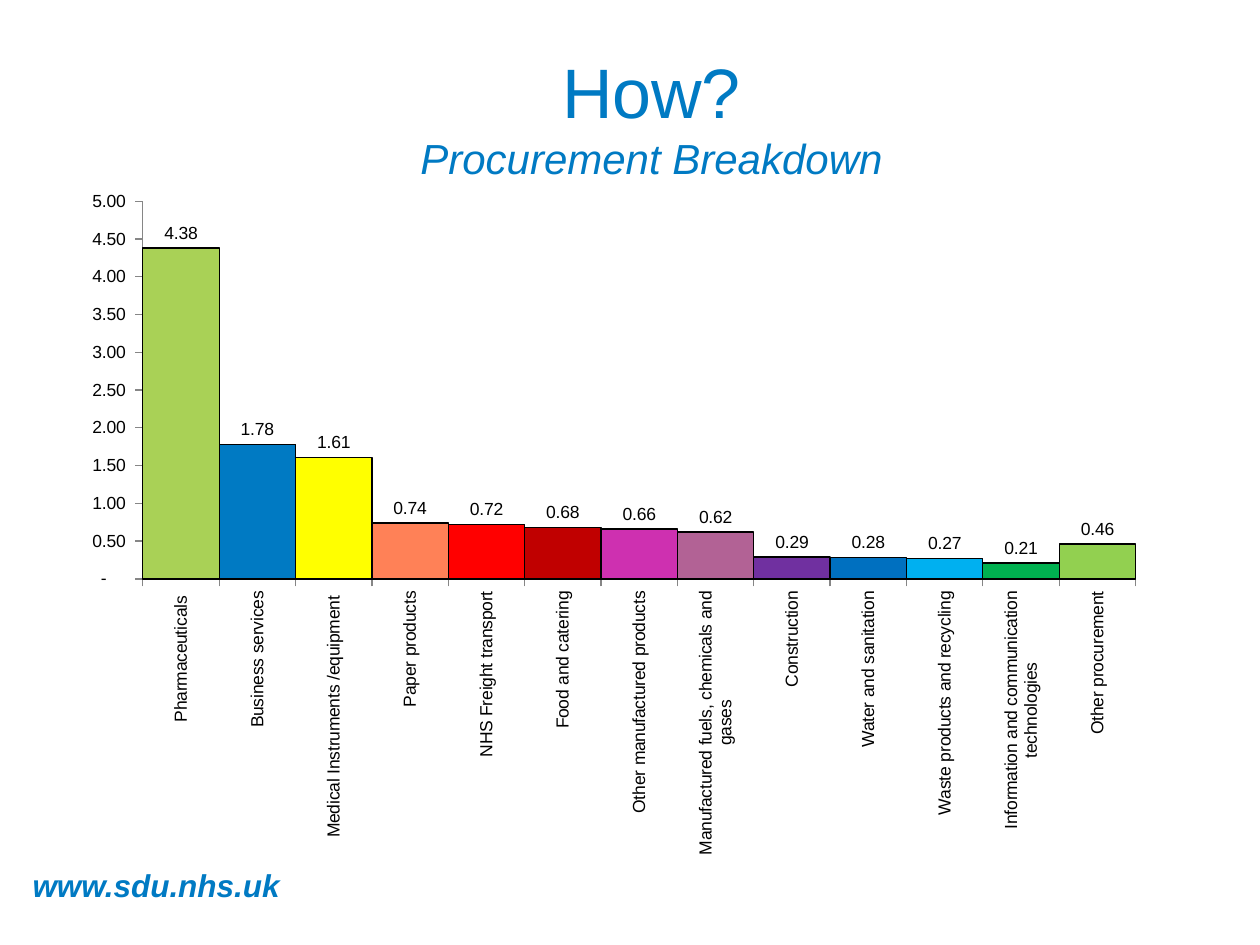
from lxml import etree
from pptx import Presentation
from pptx.chart.data import CategoryChartData
from pptx.dml.color import RGBColor
from pptx.enum.chart import XL_CHART_TYPE, XL_LABEL_POSITION, XL_TICK_MARK
from pptx.enum.text import MSO_ANCHOR, MSO_AUTO_SIZE, PP_ALIGN
from pptx.oxml import parse_xml
from pptx.oxml.ns import nsdecls, qn
from pptx.util import Inches, Pt

THEME = {
    "font": "Arial",
    "accent": "007AC3", "text": "000000", "axis": "868686",
    "title": 40, "subtitle": 24, "address": 18, "chart": 10,
}
TITLE = "How?"
SUBTITLE = "Procurement Breakdown"
ADDRESS = "www.sdu.nhs.uk"
PROCUREMENT = [  # category (long ones on two lines), value, bar colour
    ("Pharmaceuticals ", 4.38, "A9D156"),
    ("Business services", 1.78, "007AC3"),
    ("Medical Instruments /equipment ", 1.61, "FFFF00"),
    ("Paper products", 0.74, "FF8157"),
    ("NHS Freight transport", 0.72, "FF0000"),
    ("Food and catering", 0.68, "C00000"),
    ("Other manufactured products", 0.66, "CE30B0"),
    ("Manufactured fuels, chemicals and\ngases", 0.62, "B26295"),
    ("Construction", 0.29, "7030A0"),
    ("Water and sanitation", 0.28, "0070C0"),
    ("Waste products and recycling", 0.27, "00B0F0"),
    ("Information and communication\ntechnologies", 0.21, "00B050"),
    ("Other procurement", 0.46, "92D050"),
]
TITLE_BOX = (1.17, 0.55, 8, 0.74)
CHART_BOX = (0.51, 1.4, 8.66, 5.5)
PLOT_BOX = (1.13, 1.6, 7.88, 3)
ADDRESS_BOX = (0.12, 6.82, 2.24, 0.31)
AXIS_FORMAT = '_-* #,##0.00_-;\\-* #,##0.00_-;_-* "-"??_-;_-@_-'


def inches(box):
    return [Inches(length) for length in box]


def color(name):
    return RGBColor.from_string(THEME.get(name, name))


def style_font(font, size, color_name, bold=False, italic=False):
    font.name = THEME["font"]
    font.size = Pt(THEME[size])
    font.color.rgb = color(color_name)
    font.bold, font.italic = bold, italic


def add_title(slide):
    title = slide.shapes.title
    title.left, title.top, title.width, title.height = inches(TITLE_BOX)
    frame = title.text_frame
    frame.text = f"{TITLE}\v{SUBTITLE}"
    frame.auto_size = MSO_AUTO_SIZE.NONE
    frame.vertical_anchor = MSO_ANCHOR.MIDDLE
    paragraph = frame.paragraphs[0]
    paragraph.alignment = PP_ALIGN.CENTER
    heading, subtitle = paragraph.runs
    style_font(heading.font, "title", "accent")
    style_font(subtitle.font, "subtitle", "accent", italic=True)


def add_address(slide):
    frame = slide.shapes.add_textbox(*inches(ADDRESS_BOX)).text_frame
    frame.word_wrap = True
    frame.text = ADDRESS
    paragraph = frame.paragraphs[0]
    paragraph.alignment = PP_ALIGN.CENTER
    style_font(paragraph.runs[0].font, "address", "accent", bold=True, italic=True)


def place_plot(chart):
    """Fix the inner plot area, given as fractions of the chart frame."""
    left, top, width, height = CHART_BOX
    x, y, plot_width, plot_height = PLOT_BOX
    fractions = {"x": (x - left) / width, "y": (y - top) / height,
                 "w": plot_width / width, "h": plot_height / height}
    plot_area = chart._chartSpace.chart.plotArea
    for old_layout in plot_area.findall(qn("c:layout")):
        plot_area.remove(old_layout)
    layout = parse_xml(f"<c:layout {nsdecls('c')}/>")
    manual = etree.SubElement(layout, qn("c:manualLayout"))
    settings = [("layoutTarget", "inner"), ("xMode", "edge"), ("yMode", "edge")]
    settings += [(key, f"{value:.3f}") for key, value in fractions.items()]
    for key, value in settings:
        etree.SubElement(manual, qn(f"c:{key}")).set("val", value)
    plot_area.insert(0, layout)


def style_axes(chart):
    for axis in (chart.category_axis, chart.value_axis):
        axis.has_major_gridlines = False
        axis.major_tick_mark = XL_TICK_MARK.OUTSIDE
        axis.format.line.color.rgb = color("axis")
        style_font(axis.tick_labels.font, "chart", "text")
    text_body = chart.category_axis._element.find(qn("c:txPr")).find(qn("a:bodyPr"))
    text_body.set("rot", "-5400000")
    text_body.set("vert", "horz")
    values = chart.value_axis
    values.minimum_scale, values.maximum_scale, values.major_unit = 0, 5, 0.5
    values.tick_labels.number_format = AXIS_FORMAT
    values.tick_labels.number_format_is_linked = False


def style_bars(chart):
    plot = chart.plots[0]
    plot.gap_width = 0
    plot.vary_by_categories = False
    series = plot.series[0]
    series.format.fill.solid()
    series.format.fill.fore_color.rgb = color(PROCUREMENT[0][2])
    for index, (_, _, bar_color) in enumerate(PROCUREMENT):
        bar = series.points[index].format
        bar.fill.solid()
        bar.fill.fore_color.rgb = color(bar_color)
        bar.line.color.rgb = color("text")
        bar.line.width = Pt(0.75)
    labels = series.data_labels
    labels.show_value = True
    labels.number_format = "#,##0.00"
    labels.number_format_is_linked = False
    labels.position = XL_LABEL_POSITION.OUTSIDE_END
    style_font(labels.font, "chart", "text")


def add_procurement_chart(slide):
    data = CategoryChartData()
    data.categories = [name for name, _, _ in PROCUREMENT]
    data.add_series("Series 1", [value for _, value, _ in PROCUREMENT])
    chart = slide.shapes.add_chart(
        XL_CHART_TYPE.COLUMN_CLUSTERED, *inches(CHART_BOX), data).chart
    chart.has_legend = False
    chart.has_title = False
    style_font(chart.font, "chart", "text")
    style_axes(chart)
    style_bars(chart)
    place_plot(chart)


def main():
    presentation = Presentation()
    presentation.slide_width, presentation.slide_height = Inches(10), Inches(7.5)
    slide = presentation.slides.add_slide(presentation.slide_layouts[5])
    add_address(slide)
    add_title(slide)
    add_procurement_chart(slide)
    presentation.save("out.pptx")


if __name__ == "__main__":
    main()
